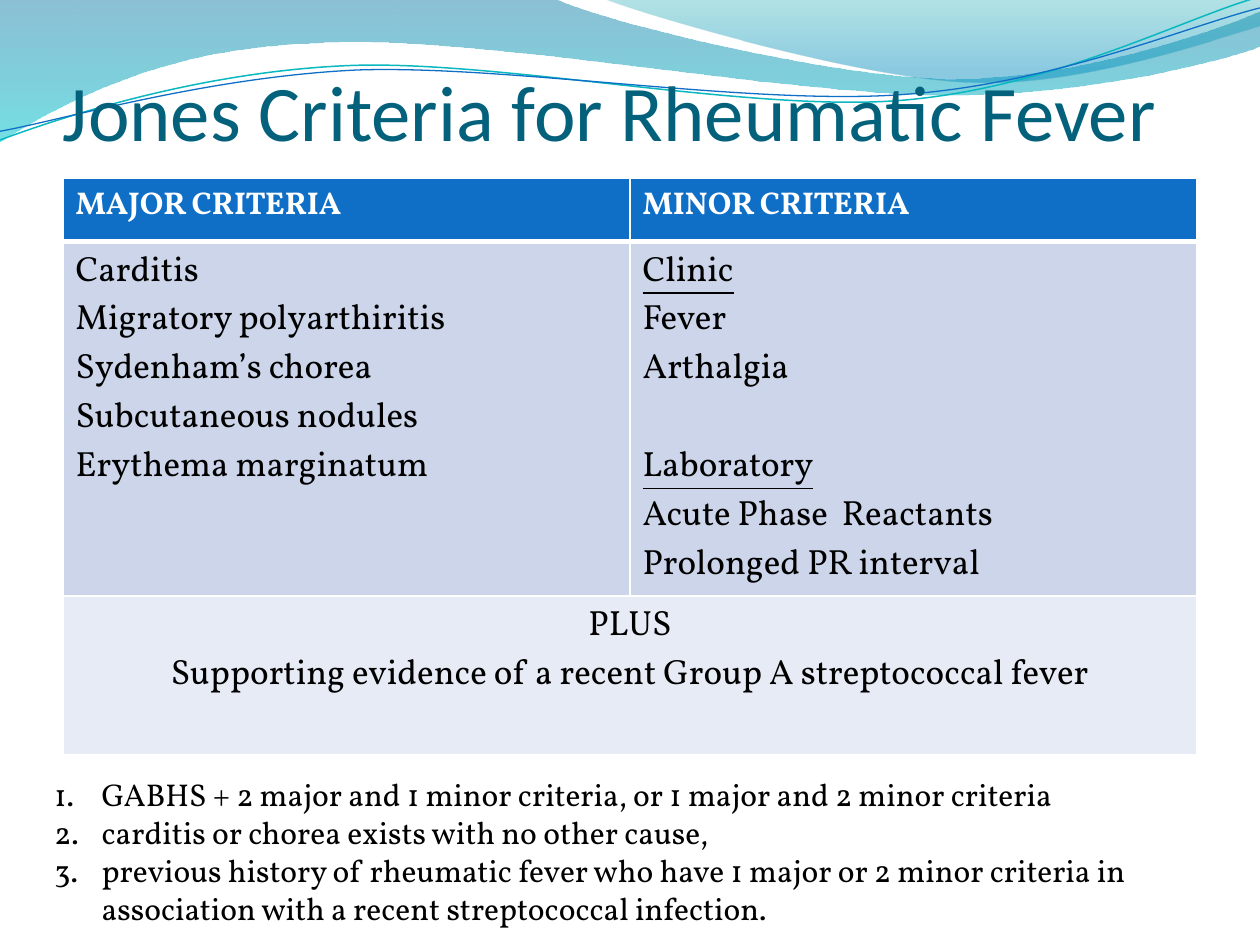
import math

from lxml import etree
from pptx import Presentation
from pptx.dml.color import RGBColor
from pptx.enum import text
from pptx.oxml import parse_xml
from pptx.oxml.ns import nsdecls, qn
from pptx.util import Pt

TITLE_TEAL = RGBColor(0x04, 0x61, 0x7B)
BLUE = RGBColor(0x0F, 0x6F, 0xC6)
AQUA = RGBColor(0x0A, 0xB8, 0xBF)
BAND_DARK = RGBColor(0xCC, 0xD5, 0xEA)
BAND_LIGHT = RGBColor(0xE7, 0xEB, 0xF5)
WHITE = RGBColor(0xFF, 0xFF, 0xFF)
BLACK = RGBColor(0, 0, 0)
BAND_STOPS = [(0, RGBColor(0x00, 0x74, 0xA1), 45), (100, RGBColor(0x00, 0xC6, 0xCF), 55)]
CREST_STOPS = [(0, RGBColor(0x00, 0xA1, 0xA9), 30), (80, RGBColor(0x00, 0x8B, 0xBF), 45)]

# Each outline is a start point, then line ends (2 numbers) or Bezier segments (6 numbers).
BAND = [(0, 0), (317, -0.7), (343, 12, 478, 45, 546, 45), (614, 45, 690, 19, 720, 6.5),
        (720.7, 26), (708, 32, 626, 55, 537, 54), (446, 54, 275, 20, 185, 24.5),
        (93, 26, 33, 60, -0.7, 81.3)]
CREST = [(345, -0.7), (366, 8, 491, 45, 554, 47), (616, 50, 692, 23, 720, 15), (720, 0)]
AQUA_LINE = [(0, 80), (35, 67, 114, 41, 199, 37.5), (284, 34, 427, 64, 513, 57.5),
             (600, 51, 675, 11, 718.5, -1.5)]
BLUE_LINE = [(0, 75), (34, 69, 118, 44, 204, 40), (290, 37, 430, 60.5, 516, 54),
             (602, 48, 678, 15, 720, 4.5)]
TILT = 2.7

MAJOR = ["Carditis", "Migratory polyarthiritis", "Sydenham’s chorea",
         "Subcutaneous nodules", "Erythema marginatum"]
MINOR = ["Clinic", "Fever", "Arthalgia", "Laboratory",
         "Acute Phase  Reactants", "Prolonged PR interval"]
SUPPORT = ["PLUS", "Supporting evidence of a recent Group A streptococcal fever"]
RULES = ["GABHS + 2 major and 1 minor criteria, or 1 major and 2 minor criteria",
         "carditis or chorea exists with no other cause,",
         "previous history of rheumatic fever who have 1 major or 2 minor criteria in "
         "association with a recent streptococcal infection."]


class Deck:
    heading_font = "Calibri"
    body_font = "Vollkorn"

    def __init__(self, prs):
        self.s = prs.slides.add_slide(prs.slide_layouts[6])

    def outline(self, outline, frame, closed, tilt=0):
        """Add a freeform in its frame, with true Bezier segments, tilted anticlockwise."""
        x, y, w, h = frame
        cos, sin = math.cos(math.radians(tilt)), math.sin(math.radians(tilt))

        def local(px, py):
            dx, dy = px - x - w / 2, py - y - h / 2
            return Pt(dx * cos - dy * sin + w / 2), Pt(dx * sin + dy * cos + h / 2)

        builder = self.s.shapes.build_freeform(*outline[0], scale=Pt(1))
        builder.add_line_segments([seg[-2:] for seg in outline[1:]], close=closed)
        sp = builder.convert_to_shape()
        sp.left, sp.top, sp.width, sp.height = Pt(x), Pt(y), Pt(w), Pt(h)
        sp.rotation = -tilt
        sp.shadow.inherit = False
        geometry = next(sp._element.iter(qn("a:path")))
        geometry.set("w", str(Pt(w)))
        geometry.set("h", str(Pt(h)))
        for step, seg in zip(list(geometry), outline):
            if len(seg) == 6:
                step.tag = qn("a:cubicBezTo")
            for child in list(step):
                step.remove(child)
            for i in range(0, len(seg), 2):
                px, py = local(*seg[i:i + 2])
                etree.SubElement(step, qn("a:pt"), x=str(px), y=str(py))
        return sp

    def wave(self, outline, frame, stops):
        """Add a closed shape with a translucent top-to-bottom gradient."""
        sp = self.outline(outline, frame, True)
        sp.line.fill.background()
        sp.fill.background()
        gs = "".join(f'<a:gs pos="{pos * 1000}"><a:srgbClr val="{color}">'
                     f'<a:alpha val="{alpha * 1000}"/></a:srgbClr></a:gs>'
                     for pos, color, alpha in stops)
        grad = parse_xml(f'<a:gradFill {nsdecls("a")} rotWithShape="1"><a:gsLst>{gs}</a:gsLst>'
                         '<a:lin ang="5400000" scaled="0"/></a:gradFill>')
        sp_pr = sp._element.spPr
        sp_pr.replace(sp_pr.find(qn("a:noFill")), grad)

    def curve(self, outline, frame, color, width):
        sp = self.outline(outline, frame, False, TILT)
        sp.fill.background()
        sp.line.color.rgb = color
        sp.line.width = Pt(width)

    def run(self, p, words, size, color=BLACK, font=body_font, bold=False):
        r = p.add_run()
        r.text = words
        r.font.name, r.font.size, r.font.bold = font, Pt(size), bold
        r.font.color.rgb = color
        return r

    def paragraphs(self, tf, lines):
        """Yield a paragraph for each line of text."""
        for i, line in enumerate(lines):
            yield (tf.add_paragraph() if i else tf.paragraphs[0]), line

    def box(self, x, y, w, h):
        tf = self.s.shapes.add_textbox(Pt(x), Pt(y), Pt(w), Pt(h)).text_frame
        tf.word_wrap = True
        return tf

    def title(self, words, x, y, w, h):
        tf = self.box(x, y, w, h)
        tf.margin_left = tf.margin_right = tf.margin_bottom = 0
        tf.vertical_anchor = text.MSO_ANCHOR.BOTTOM
        self.run(tf.paragraphs[0], words, 45, TITLE_TEAL, self.heading_font)

    def numbered(self, lines, x, y, w, h):
        tf = self.box(x, y, w, h)
        for p, line in self.paragraphs(tf, lines):
            p_pr = p._p.get_or_add_pPr()
            p_pr.set("marL", str(Pt(27)))
            p_pr.set("indent", str(-Pt(27)))
            etree.SubElement(p_pr, qn("a:buAutoNum"), type="arabicPeriod")
            self.run(p, line, 18)

    def table(self, x, y, widths, heights):
        shape = self.s.shapes.add_table(len(heights), len(widths), Pt(x), Pt(y),
                                        Pt(sum(widths)), Pt(sum(heights)))
        table = shape.table
        table.horz_banding = False
        for column, width in zip(table.columns, widths):
            column.width = Pt(width)
        for row, height in zip(table.rows, heights):
            row.height = Pt(height)
        return table

    def cell(self, cell, fill, top=1, bottom=1):
        """Give a cell white borders and a plain fill."""
        tc_pr = cell._tc.get_or_add_tcPr()
        for side, width in zip("LRTB", (1, 1, top, bottom)):
            tc_pr.append(parse_xml(
                f'<a:ln{side} {nsdecls("a")} w="{Pt(width)}"><a:solidFill>'
                f'<a:srgbClr val="{WHITE}"/></a:solidFill></a:ln{side}>'))
        cell.fill.solid()
        cell.fill.fore_color.rgb = fill


def criteria_table(deck):
    table = deck.table(36, 101.9, [324, 324], [36, 202.8, 90.6])
    for col, (heading, items) in enumerate([("MAJOR CRITERIA", MAJOR), ("MINOR CRITERIA", MINOR)]):
        head, body, foot = (table.cell(row, col) for row in range(3))
        deck.cell(head, BLUE, bottom=3)
        deck.cell(body, BAND_DARK, top=3)
        deck.cell(foot, BAND_LIGHT)
        deck.run(head.text_frame.paragraphs[0], heading, 18, WHITE, bold=True)
        for p, item in deck.paragraphs(body.text_frame, items):
            r = deck.run(p, item, 20)
            r.font.underline = item in ("Clinic", "Laboratory")
            if item == "Laboratory":
                p.space_before = Pt(28)
    support = table.cell(2, 0)
    support.merge(table.cell(2, 1))
    for p, line in deck.paragraphs(support.text_frame, SUPPORT):
        p.alignment = text.PP_ALIGN.CENTER
        deck.run(p, line, 20)


def main():
    prs = Presentation()
    prs.slide_width, prs.slide_height = Pt(720), Pt(540)
    deck = Deck(prs)
    deck.wave(BAND, (-0.7, -0.7, 721.4, 82), BAND_STOPS)
    deck.wave(CREST, (345, -0.7, 375, 50), CREST_STOPS)
    deck.curve(AQUA_LINE, (-1.4, 15.8, 721.4, 51.1), AQUA, 0.85)
    deck.curve(BLUE_LINE, (-1.4, 21.6, 722.2, 41.8), BLUE, 0.75)
    deck.title("Jones Criteria for Rheumatic Fever", 36, 0, 648, 90)
    criteria_table(deck)
    deck.numbered(RULES, 24, 439.5, 690, 94)
    prs.save("out.pptx")


if __name__ == "__main__":
    main()
